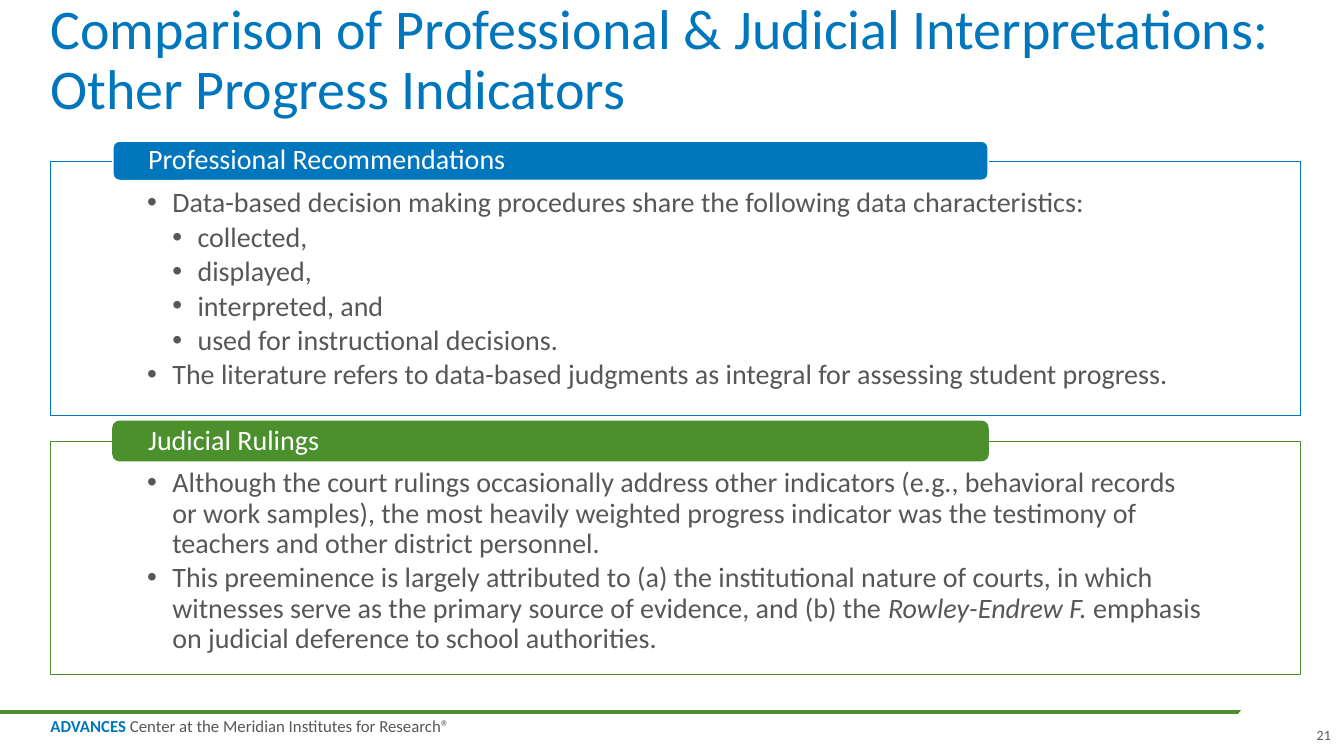
from pptx import Presentation
from pptx.dml.color import RGBColor
from pptx.enum import shapes, text
from pptx.oxml import parse_xml
from pptx.oxml.ns import nsdecls
from pptx.util import Inches, Pt

THEME = {
    "font": "Calibri",
    "blue": "0076BD", "green": "4C902D", "gray": "59565A", "white": "FFFFFF",
    "title": 40, "body": 20, "foot": 12, "page": 10,
}
TITLE = "Comparison of Professional & Judicial Interpretations: Other Progress Indicators"
# Each bullet is a level and its runs; a run is text with optional format.
PANELS = [
    {"head": "Professional Recommendations", "color": "blue", "edge": "white",
     "top": 1.6, "height": 2.52, "bullets": [
         (0, [("Data-based decision making procedures share the following "
               "data characteristics:", {})]),
         (1, [("collected,", {})]),
         (1, [("displayed,", {})]),
         (1, [("interpreted, and", {})]),
         (1, [("used for instructional decisions.", {})]),
         (0, [("The literature refers to data-based judgments as integral for "
               "assessing student progress.", {})]),
     ]},
    {"head": "Judicial Rulings", "color": "green", "edge": "green",
     "top": 4.38, "height": 2.31, "bullets": [
         (0, [("Although the court rulings occasionally address other indicators "
               "(e.g., behavioral records or work samples), the most heavily weighted "
               "progress indicator was the testimony of teachers and other district "
               "personnel.", {})]),
         (0, [("This preeminence is largely attributed to (a) the institutional nature "
               "of courts, in which witnesses serve as the primary source of evidence, "
               "and (b) the ", {}),
              ("Rowley-Endrew F.", {"italic": True}),
              (" emphasis on judicial deference to school authorities.", {})]),
     ]},
]
FOOTER = [("ADVANCES", {"bold": True, "color": "blue"}),
          (" Center at the Meridian Institutes for Research®", {})]
PAGE = "21"
LEFT, WIDTH = 0.5, 12.4
BAR = {"left": 1.12, "width": 8.68, "height": 0.39, "rise": 0.2}
INDENT = 0.25


def rgb(name):
    return RGBColor.from_string(THEME[name])


def box(slide, at):
    return slide.shapes.add_textbox(*map(Inches, at))


def block(slide, kind, at, fill, edge=None):
    shape = slide.shapes.add_shape(kind, *map(Inches, at))
    shape.shadow.inherit = False
    shape.fill.solid()
    shape.fill.fore_color.rgb = rgb(fill)
    if edge:
        shape.line.color.rgb = rgb(edge)
        shape.line.width = Pt(1)
    else:
        shape.line.fill.background()
    return shape


def write(shape, paras, size, color="gray", inset=(0, 0, 0, 0), anchor="TOP",
          align="LEFT", wrap=True, spacing=0.9, after=0, bullet=False):
    """Fill a shape with (level, runs) paragraphs."""
    frame = shape.text_frame
    frame.word_wrap = wrap
    frame.vertical_anchor = getattr(text.MSO_ANCHOR, anchor)
    (frame.margin_left, frame.margin_top,
     frame.margin_right, frame.margin_bottom) = map(Inches, inset)
    for i, (level, runs) in enumerate(paras):
        para = frame.add_paragraph() if i else frame.paragraphs[0]
        para.alignment = getattr(text.PP_ALIGN, align)
        para.level = level
        para.line_spacing = spacing
        para.space_after = Pt(after)
        if bullet:
            props = para._p.get_or_add_pPr()
            props.set("marL", str(Inches(INDENT * (level + 1))))
            props.set("indent", str(Inches(-INDENT)))
            props.append(parse_xml(f'<a:buFont {nsdecls("a")} typeface="Arial"/>'))
            props.append(parse_xml(f'<a:buChar {nsdecls("a")} char="•"/>'))
        for words, style in runs:
            run = para.add_run()
            run.text = words
            font = run.font
            font.name, font.size = THEME["font"], Pt(THEME[size])
            font.color.rgb = rgb(style.get("color", color))
            font.bold = style.get("bold", False)
            font.italic = style.get("italic", False)


def rule(slide):
    """Draw the footer line with its slanted right end."""
    line = slide.shapes.add_connector(
        shapes.MSO_CONNECTOR.STRAIGHT, 0, Inches(7.06), Inches(13), Inches(7.06))
    line.line.color.rgb = rgb("green")
    line.line.width = Pt(3)
    line._element.spPr.append(parse_xml(f'<a:effectLst {nsdecls("a")}/>'))
    cut = block(slide, shapes.MSO_SHAPE.OVAL, (12.16, 6.77, 1.19, 0.58), "white")
    cut.rotation = 332.1


def panel(slide, head, color, edge, top, height, bullets):
    body = block(slide, shapes.MSO_SHAPE.RECTANGLE,
                 (LEFT, top, WIDTH, height), "white", color)
    write(body, bullets, "body", inset=(0.96, 0.27, 0.96, 0.16), after=3, bullet=True)
    bar = block(slide, shapes.MSO_SHAPE.ROUNDED_RECTANGLE,
                (BAR["left"], top - BAR["rise"], BAR["width"], BAR["height"]),
                color, edge)
    write(bar, [(0, [(head, {})])], "body", "white",
          inset=(0.33, 0, 0.33, 0), anchor="MIDDLE")


def main():
    deck = Presentation()
    deck.slide_width, deck.slide_height = Inches(13.33), Inches(7.5)
    slide = deck.slides.add_slide(deck.slide_layouts[6])
    rule(slide)
    write(box(slide, (LEFT, 7.13, 4.02, 0.17)), [(0, FOOTER)], "foot",
          wrap=False, spacing=0.85)
    write(box(slide, (LEFT, 0, WIDTH, 1.21)), [(0, [(TITLE, {})])], "title",
          "blue", anchor="BOTTOM")
    for part in PANELS:
        panel(slide, **part)
    write(box(slide, (13.03, 7.2, 0.17, 0.17)), [(0, [(PAGE, {})])], "page",
          anchor="BOTTOM", align="RIGHT", wrap=False, spacing=1.0)
    deck.save("out.pptx")


if __name__ == "__main__":
    main()
